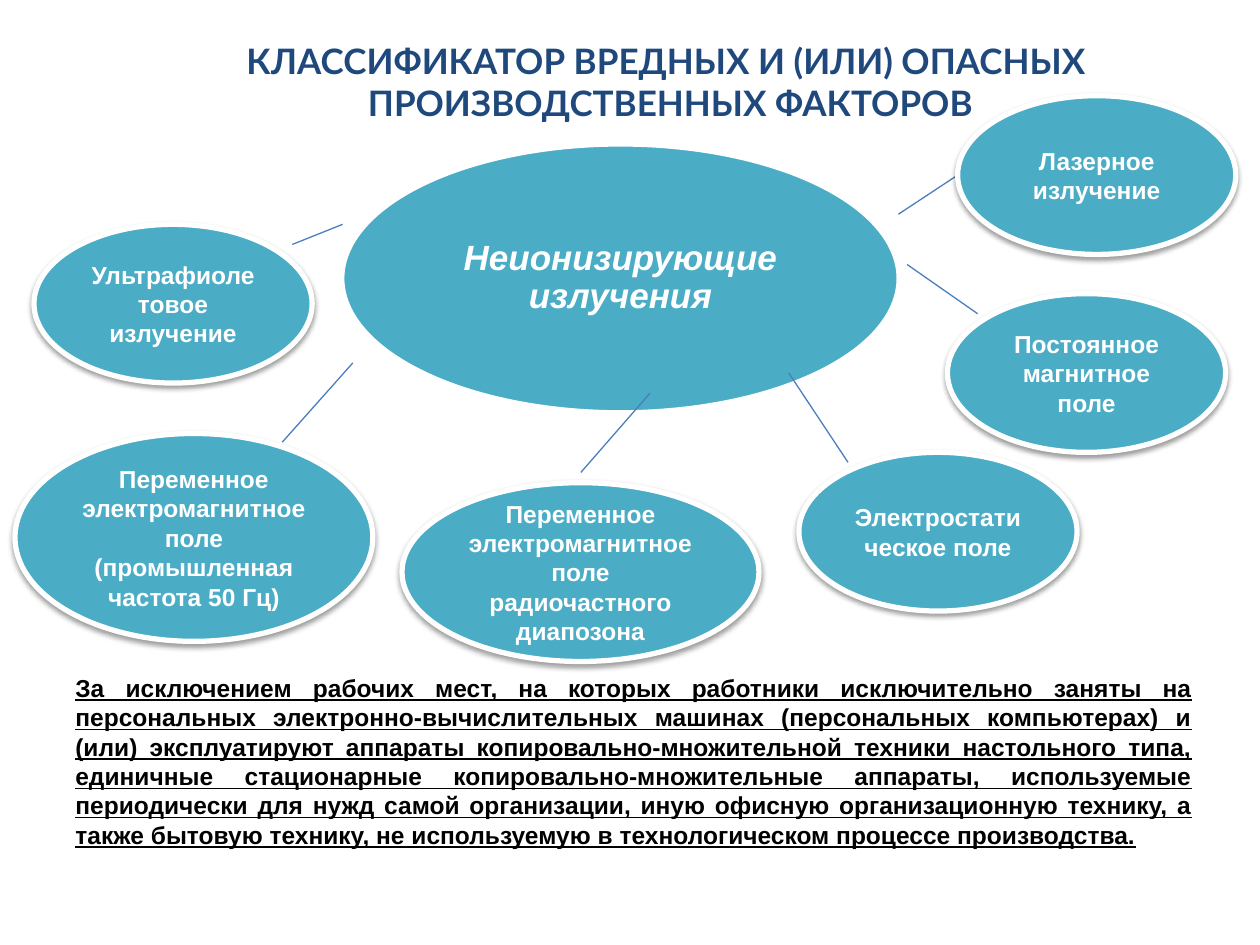
from lxml.etree import SubElement
from pptx import Presentation
from pptx.dml.color import RGBColor
from pptx.enum.shapes import MSO_CONNECTOR, MSO_SHAPE
from pptx.enum.text import MSO_ANCHOR, PP_ALIGN
from pptx.oxml.ns import qn
from pptx.util import Pt

TEAL, WHITE, NAVY, BLUE, BLACK = "4BACC6", "FFFFFF", "1F497D", "4B7EBC", "000000"

TITLE = ["КЛАССИФИКАТОР ВРЕДНЫХ И (ИЛИ) ОПАСНЫХ ", "ПРОИЗВОДСТВЕННЫХ ФАКТОРОВ"]
EXCEPTION = (
    "За исключением рабочих мест, на которых работники исключительно заняты на "
    "персональных электронно-вычислительных машинах (персональных компьютерах) и "
    "(или) эксплуатируют аппараты копировально-множительной техники настольного типа, "
    "единичные стационарные копировально-множительные аппараты, используемые "
    "периодически для нужд самой организации, иную офисную организационную технику, а "
    "также бытовую технику, не используемую в технологическом процессе производства."
)

SMALL = (159, 90.7)
# Factor: text, left, top, size, ray start, ray end
FACTORS = [
    ("Переменное электромагнитное поле (промышленная частота 50 Гц)",
     8.6, 247.7, (204.5, 118.8), (201.6, 207.4), (161.3, 252.7)),
    ("Переменное электромагнитное поле радиочастного диапозона",
     229.7, 275.8, (204, 102.2), (371.5, 224.6), (331.9, 270)),
    ("Постоянное магнитное поле",
     541.4, 167.8, SMALL, (518.4, 151.2), (558.7, 179.3)),
    ("Электростатическое поле",
     456.5, 258.5, SMALL, (450.7, 213.1), (484.6, 264.2)),
    ("Ультрафиолетовое излучение",
     19.4, 128.2, SMALL, (195.8, 128.2), (167, 139.7)),
    ("Лазерное излучение",
     547.2, 54.7, SMALL, (547.2, 100.1), (513.4, 122.4)),
]


def color(hex_string):
    return RGBColor.from_string(hex_string)


def set_insets(frame, inset):
    frame.margin_left = frame.margin_right = Pt(inset)
    frame.margin_top = frame.margin_bottom = Pt(inset)


def write(frame, lines, size, hex_color, font="Arial", align=PP_ALIGN.CENTER,
          italic=False, underline=False):
    paragraph = frame.paragraphs[0]
    paragraph.alignment = align
    for index, line in enumerate(lines):
        if index:
            paragraph.add_line_break()
        run = paragraph.add_run()
        run.text = line
        run.font.name = font
        run.font.size = Pt(size)
        run.font.bold = True
        run.font.italic = italic
        run.font.underline = underline
        run.font.color.rgb = color(hex_color)
    return paragraph


def add_text(slide, left, top, width, height, wrap=True):
    frame = slide.shapes.add_textbox(Pt(left), Pt(top), Pt(width), Pt(height)).text_frame
    frame.word_wrap = wrap
    return frame


def add_ellipse(slide, left, top, width, height, border):
    ellipse = slide.shapes.add_shape(
        MSO_SHAPE.OVAL, Pt(left), Pt(top), Pt(width), Pt(height))
    ellipse.shadow.inherit = False
    ellipse.fill.solid()
    ellipse.fill.fore_color.rgb = color(TEAL)
    ellipse.line.color.rgb = color(WHITE)
    ellipse.line.width = Pt(border)
    ellipse.text_frame.word_wrap = True
    ellipse.text_frame.vertical_anchor = MSO_ANCHOR.MIDDLE
    return ellipse


def add_soft_shadow(shape):
    effects = shape._element.spPr.find(qn("a:effectLst"))
    shadow = SubElement(effects, qn("a:outerShdw"), blurRad=str(Pt(3.1)),
                        dist=str(Pt(1.6)), dir="5400000", rotWithShape="0")
    tint = SubElement(shadow, qn("a:srgbClr"), val=BLACK)
    SubElement(tint, qn("a:alpha"), val="38000")


def add_ray(slide, start, end):
    ray = slide.shapes.add_connector(
        MSO_CONNECTOR.STRAIGHT, *(Pt(value) for value in start + end))
    ray.line.color.rgb = color(BLUE)
    ray.line.width = Pt(0.75)
    SubElement(ray._element.spPr, qn("a:effectLst"))


def add_factor(slide, text, left, top, size):
    factor = add_ellipse(slide, left, top, *size, border=3)
    add_soft_shadow(factor)
    write(factor.text_frame, [text], 14, WHITE)


def main():
    presentation = Presentation()
    presentation.slide_width, presentation.slide_height = Pt(720), Pt(540)
    slide = presentation.slides.add_slide(presentation.slide_layouts[6])

    # Title
    title = add_text(slide, 59.8, 4.3, 646.6, 85, wrap=False)
    title.vertical_anchor = MSO_ANCHOR.MIDDLE
    set_insets(title, 0)
    write(title, TITLE, 20, NAVY, font="Lato")

    # Central topic
    topic = add_ellipse(slide, 195.8, 82.8, 317.5, 152.6, border=2).text_frame
    set_insets(topic, 2.2)
    write(topic, ["Неионизирующие излучения"], 20, WHITE, italic=True).line_spacing = 0.9

    # Factors and their rays
    for text, left, top, size, start, end in FACTORS:
        add_ray(slide, start, end)
        add_factor(slide, text, left, top, size)

    # Exception note
    note = add_text(slide, 36, 380.9, 652.3, 108.7)
    write(note, [EXCEPTION], 14, BLACK, align=PP_ALIGN.JUSTIFY, underline=True)

    presentation.save("out.pptx")


if __name__ == "__main__":
    main()
